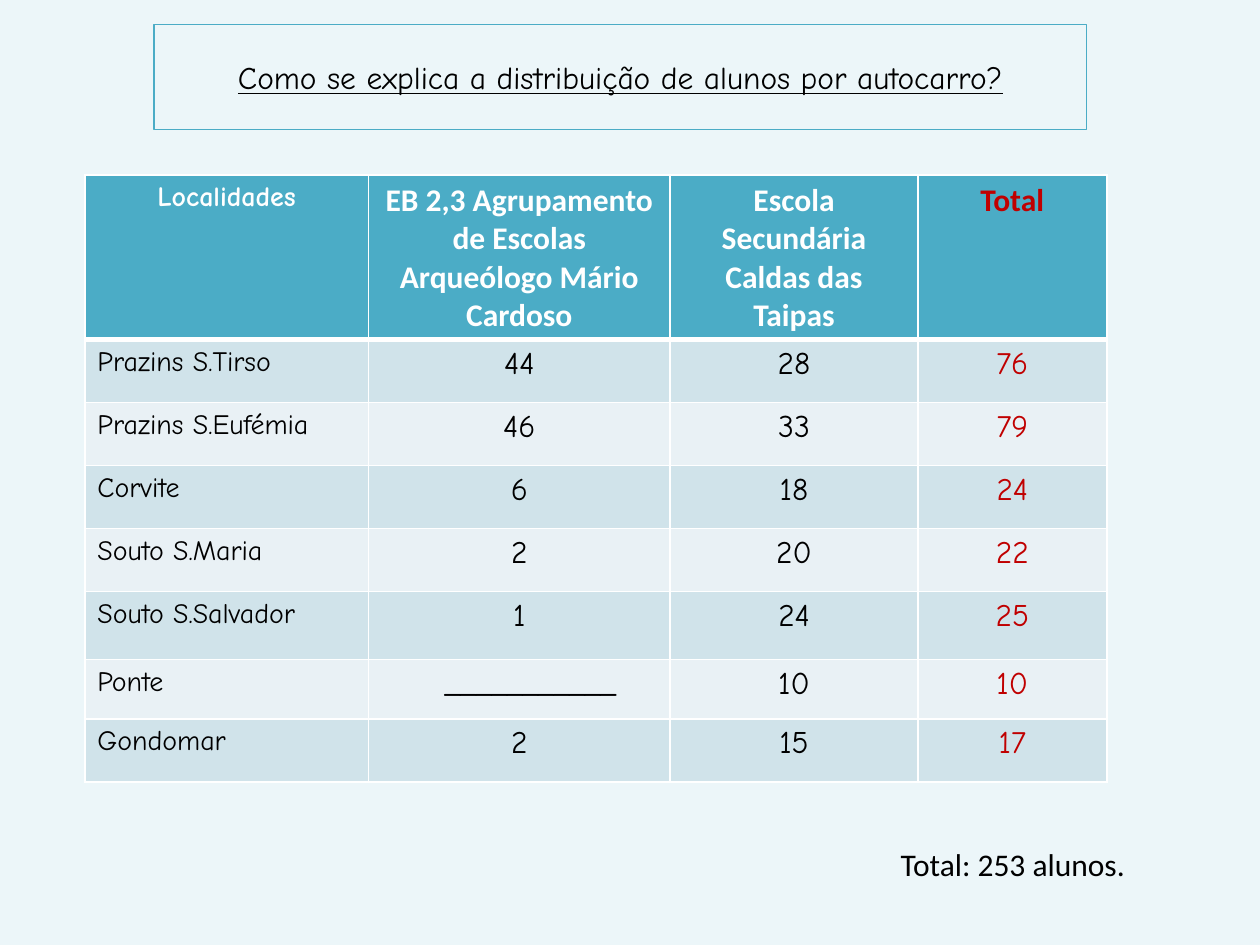
"""Build the slide on how pupils are distributed by bus."""
from dataclasses import dataclass

from lxml import etree
from pptx import Presentation
from pptx.dml.color import RGBColor
from pptx.enum.text import MSO_ANCHOR, MSO_AUTO_SIZE, PP_ALIGN
from pptx.oxml.ns import qn
from pptx.util import Pt

CENTER, LEFT = PP_ALIGN.CENTER, PP_ALIGN.LEFT
MIDDLE = MSO_ANCHOR.MIDDLE
GROW = MSO_AUTO_SIZE.SHAPE_TO_FIT_TEXT
TITLE_ONLY = 5

BACKGROUND = RGBColor(0xEC, 0xF6, 0xF9)
TEAL = RGBColor(0x4B, 0xAC, 0xC6)
DARK_BAND = RGBColor(0xD0, 0xE3, 0xEA)
LIGHT_BAND = RGBColor(0xE9, 0xF1, 0xF5)
WHITE = RGBColor(0xFF, 0xFF, 0xFF)
BLACK = RGBColor(0, 0, 0)
RED = RGBColor(0xC0, 0, 0)

COMIC, PLAIN = "Comic Neue", "Calibri"
COLUMN_WIDTHS = (162, 172.5, 141.5, 108)
ROW_HEIGHTS = (94, 36, 36, 36, 36, 39, 34, 36)
HEADER_RULE, THIN_RULE = 3, 1
NO_PUPILS = "_" * 11
NO_PUPILS_MARGIN = 20


@dataclass(frozen=True)
class TextStyle:
    """Font and alignment of a span."""
    font: str
    size: float
    color: RGBColor
    align: PP_ALIGN = CENTER
    bold: bool = False
    underline: bool = False


@dataclass(frozen=True)
class Locality:
    """Pupils of one locality in each school."""
    name: str
    basic: str
    secondary: str
    total: str


HEADERS = (
    ("Localidades", TextStyle(COMIC, 16, WHITE, bold=True)),
    ("EB 2,3 Agrupamento de Escolas Arqueólogo Mário Cardoso",
     TextStyle(PLAIN, 18, WHITE, bold=True)),
    ("Escola Secundária Caldas das Taipas", TextStyle(PLAIN, 18, WHITE, bold=True)),
    ("Total", TextStyle(PLAIN, 18, RED, bold=True)),
)
NAME_STYLE = TextStyle(COMIC, 16, BLACK, LEFT)
COUNT_STYLE = TextStyle(COMIC, 18, BLACK)
TOTAL_STYLE = TextStyle(COMIC, 18, RED)
LOCALITIES = (
    Locality("Prazins S.Tirso", "44", "28", "76"),
    Locality("Prazins S.Eufémia", "46", "33", "79"),
    Locality("Corvite", "6", "18", "24"),
    Locality("Souto S.Maria", "2", "20", "22"),
    Locality("Souto S.Salvador", "1", "24", "25"),
    Locality("Ponte", NO_PUPILS, "10", "10"),
    Locality("Gondomar", "2", "15", "17"),
)


def write(frame, text: str, style: TextStyle) -> None:
    """Write one styled span into a text frame."""
    para = frame.paragraphs[0]
    para.alignment = style.align
    span = para.add_run()
    span.text = text
    span.font.name = style.font
    span.font.size = Pt(style.size)
    span.font.color.rgb = style.color
    span.font.bold = style.bold
    span.font.underline = style.underline


def place(box, left: float, top: float, width: float, height: float) -> None:
    """Set the position and size of a box in points."""
    box.left, box.top, box.width, box.height = map(Pt, (left, top, width, height))


def add_border(cell, side: str, width: float) -> None:
    """Add a white border to one side of a cell."""
    properties = cell._tc.get_or_add_tcPr()
    line = etree.SubElement(properties, qn(f"a:ln{side}"), w=str(Pt(width)))
    fill = etree.SubElement(line, qn("a:solidFill"))
    etree.SubElement(fill, qn("a:srgbClr"), val=str(WHITE))


def fill_cell(cell, row: int, text: str, style: TextStyle) -> None:
    """Give a cell its borders, band colour and text."""
    top = HEADER_RULE if row == 1 else THIN_RULE
    bottom = HEADER_RULE if row == 0 else THIN_RULE
    for side, width in zip("LRTB", (THIN_RULE, THIN_RULE, top, bottom)):
        add_border(cell, side, width)
    cell.fill.solid()
    band = DARK_BAND if row % 2 else LIGHT_BAND
    cell.fill.fore_color.rgb = band if row else TEAL
    if text == NO_PUPILS:
        cell.margin_left = Pt(NO_PUPILS_MARGIN)
    write(cell.text_frame, text, style)


def add_pupil_table(page) -> None:
    """Add the table of pupils by locality and school."""
    table = page.shapes.add_table(
        len(ROW_HEIGHTS), len(COLUMN_WIDTHS), Pt(48.5), Pt(100),
        Pt(sum(COLUMN_WIDTHS)), Pt(sum(ROW_HEIGHTS))).table
    for column, width in zip(table.columns, COLUMN_WIDTHS):
        column.width = Pt(width)
    for line, height in zip(table.rows, ROW_HEIGHTS):
        line.height = Pt(height)
    rows = [HEADERS] + [
        ((place_row.name, NAME_STYLE), (place_row.basic, COUNT_STYLE),
         (place_row.secondary, COUNT_STYLE), (place_row.total, TOTAL_STYLE))
        for place_row in LOCALITIES]
    for row, entries in enumerate(rows):
        for column, (text, style) in enumerate(entries):
            fill_cell(table.cell(row, column), row, text, style)


def add_title(page) -> None:
    """Format the title placeholder as an outlined box."""
    title = page.shapes.title
    place(title, 88, 29.5, 533, 29)
    title.line.color.rgb = TEAL
    title.line.width = Pt(0.75)
    frame = title.text_frame
    frame.word_wrap = True
    frame.auto_size = GROW
    frame.vertical_anchor = MIDDLE
    write(frame, "Como se explica a distribuição de alunos por autocarro?",
          TextStyle(COMIC, 18, BLACK, underline=True))


def add_grand_total(page) -> None:
    """Add the number of pupils in all."""
    box = page.shapes.add_textbox(Pt(507.5), Pt(479.5), Pt(153.5), Pt(29))
    box.text_frame.word_wrap = True
    box.text_frame.auto_size = GROW
    write(box.text_frame, "Total: 253 alunos.", TextStyle(PLAIN, 18, BLACK, LEFT))


def main() -> None:
    """Build and save the deck."""
    deck = Presentation()
    deck.slide_width, deck.slide_height = Pt(720), Pt(540)
    page = deck.slides.add_slide(deck.slide_layouts[TITLE_ONLY])
    page.background.fill.solid()
    page.background.fill.fore_color.rgb = BACKGROUND
    add_pupil_table(page)
    add_title(page)
    add_grand_total(page)
    deck.save("out.pptx")


if __name__ == "__main__":
    main()
